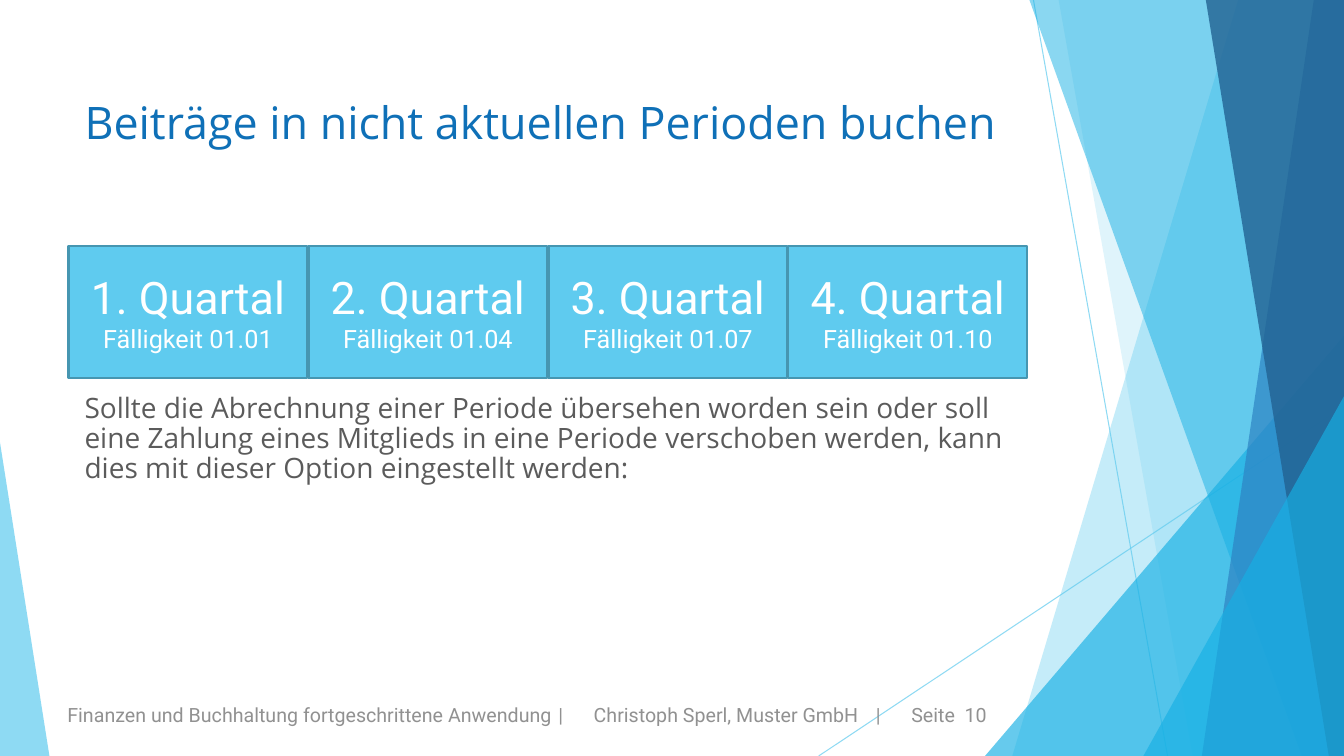
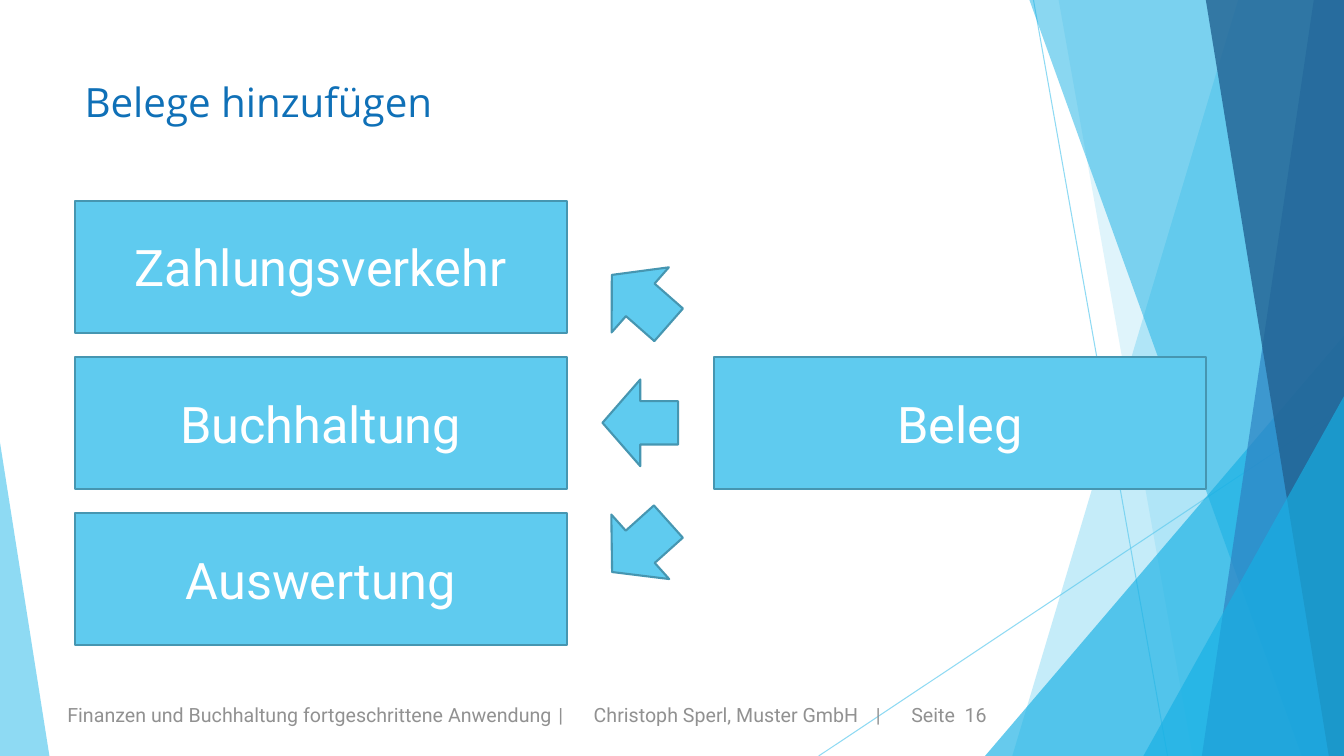
from lxml.etree import SubElement
from pptx import Presentation
from pptx.dml.color import RGBColor
from pptx.enum.shapes import MSO_CONNECTOR, MSO_SHAPE
from pptx.enum.text import MSO_ANCHOR, PP_ALIGN
from pptx.oxml.ns import qn
from pptx.util import Inches, Pt

SKY = RGBColor(0x5F, 0xCB, 0xEF)
CYAN = RGBColor(0x17, 0xB0, 0xE4)
BLUE = RGBColor(0x2E, 0x83, 0xC3)
NAVY = RGBColor(0x22, 0x62, 0x92)
EDGE = RGBColor(0x46, 0x96, 0xB1)
TITLE = RGBColor(0x0F, 0x70, 0xB7)
BODY = RGBColor(0x5B, 0x5B, 0x5B)
FOOTER = RGBColor(0x91, 0x91, 0x91)
WHITE = RGBColor(0xFF, 0xFF, 0xFF)
HEAD_FONT = "Open Sans"
LABEL_FONT = "Roboto"
WIDTH, HEIGHT = 13.33, 7.5
MARGIN = 0.74
BOX_HEIGHT = 1.31
FOOTER_TABS = (4.87, 5.22, 8.02, 8.37, 8.9)


class Deck:
    """Hold the shared style and the current slide."""

    def __init__(self):
        self.presentation = Presentation()
        self.presentation.slide_width = Inches(WIDTH)
        self.presentation.slide_height = Inches(HEIGHT)
        self.slide = None

    def new_slide(self, title, top, size, number):
        self.slide = self.presentation.slides.add_slide(self.presentation.slide_layouts[6])
        self.facets()
        self.footer(number)
        self.text(title, MARGIN, top, 9.4, 0.7, size, HEAD_FONT, TITLE)

    def fade(self, fill, opacity):
        for color in fill.iter(qn("a:srgbClr")):
            SubElement(color, qn("a:alpha"), val=str(opacity * 1000))

    def paint(self, shape, color, opacity=100, edge=None):
        shape.shadow.inherit = False
        shape.fill.solid()
        shape.fill.fore_color.rgb = color
        if opacity < 100:
            self.fade(shape.fill._xPr.find(qn("a:solidFill")), opacity)
        if edge is None:
            shape.line.fill.background()
        else:
            shape.line.color.rgb = edge
            shape.line.width = Pt(1.5)

    def ray(self, start, end):
        line = self.slide.shapes.add_connector(
            MSO_CONNECTOR.STRAIGHT, *map(Inches, start + end))
        line.line.color.rgb = SKY
        line.line.width = Pt(0.75)
        properties = line._element.spPr
        self.fade(properties, 70)
        SubElement(properties, qn("a:effectLst"))

    def shard(self, top_x, bottom_x, color, opacity):
        builder = self.slide.shapes.build_freeform(Inches(top_x), 0)
        corners = ((WIDTH, 0), (WIDTH, HEIGHT), (bottom_x, HEIGHT))
        builder.add_line_segments([(Inches(x), Inches(y)) for x, y in corners])
        self.paint(builder.convert_to_shape(), color, opacity)

    def wedge(self, left, top, width, apex, color, opacity):
        triangle = self.slide.shapes.add_shape(
            MSO_SHAPE.ISOSCELES_TRIANGLE,
            Inches(left), Inches(top), Inches(width), Inches(HEIGHT - top))
        triangle.adjustments[0] = apex
        self.paint(triangle, color, opacity)

    def facets(self):
        self.ray((10.25, 0), (11.58, HEIGHT))
        self.ray((WIDTH, 4.03), (8.12, HEIGHT))
        self.shard(12.28, 10.04, SKY, 36)
        self.shard(10.5, 11.83, SKY, 20)
        self.wedge(9.77, 3.33, 3.56, 1, CYAN, 66)
        self.shard(10.21, 12.91, CYAN, 50)
        self.shard(13.03, 11.92, BLUE, 70)
        self.shard(11.96, 13.18, NAVY, 80)
        self.wedge(11.34, 3.93, 1.99, 1, CYAN, 66)
        self.wedge(0, 4.39, 0.49, 0, SKY, 70)

    def text(self, content, left, top, width, height, size, font, color, tabs=()):
        box = self.slide.shapes.add_textbox(
            Inches(left), Inches(top), Inches(width), Inches(height))
        box.text_frame.word_wrap = True
        paragraph = box.text_frame.paragraphs[0]
        paragraph.text = content
        if tabs:
            stops = SubElement(paragraph._p.get_or_add_pPr(), qn("a:tabLst"))
            for position in tabs:
                SubElement(stops, qn("a:tab"), pos=str(Inches(position)), algn="l")
        self.style(paragraph.runs[0], size, font, color)
        return paragraph

    def style(self, run, size, font, color):
        run.font.size = Pt(size)
        run.font.name = font
        run.font.color.rgb = color

    def footer(self, number):
        self.text("Finanzen und Buchhaltung fortgeschrittene Anwendung\t|\t"
                  f"Christoph Sperl, Muster GmbH\t|\tSeite\t{number}",
                  0.57, 6.92, 10.36, 0.34, 14, LABEL_FONT, FOOTER, FOOTER_TABS)

    def body(self, content, top):
        paragraph = self.text(content, MARGIN, top, 9.76, 2.36, 20, HEAD_FONT, BODY)
        paragraph.line_spacing = 0.9

    def box(self, content, left, top, width, sizes):
        shape = self.slide.shapes.add_shape(
            MSO_SHAPE.RECTANGLE,
            Inches(left), Inches(top), Inches(width), Inches(BOX_HEIGHT))
        self.paint(shape, SKY, edge=EDGE)
        shape.text_frame.word_wrap = True
        shape.text_frame.vertical_anchor = MSO_ANCHOR.MIDDLE
        paragraph = shape.text_frame.paragraphs[0]
        paragraph.text = content
        paragraph.alignment = PP_ALIGN.CENTER
        for run, size in zip(paragraph.runs, sizes):
            self.style(run, size, LABEL_FONT, WHITE)

    def arrow(self, top, angle):
        shape = self.slide.shapes.add_shape(
            MSO_SHAPE.DOWN_ARROW, Inches(5.92), Inches(top), Inches(0.86), Inches(0.75))
        shape.rotation = angle
        self.paint(shape, SKY, edge=EDGE)


def main():
    deck = Deck()

    deck.new_slide("Beiträge in nicht aktuellen Perioden buchen", 0.89, 32, 10)
    for index, month in enumerate(("01", "04", "07", "10")):
        deck.box(f"{index + 1}. Quartal\vFälligkeit 01.{month}",
                 0.68 + index * 2.38, 2.44, 2.37, (32, 18))
    deck.body("Sollte die Abrechnung einer Periode übersehen worden sein oder soll "
              "eine Zahlung eines Mitglieds in eine Periode verschoben werden, kann "
              "dies mit dieser Option eingestellt werden:", 3.86)

    deck.new_slide("Belege hinzufügen", 0.72, 28.8, 16)
    for index, target in enumerate(("Zahlungsverkehr", "Buchhaltung", "Auswertung")):
        deck.box(target, MARGIN, 1.99 + index * 1.55, 4.88, (36,))
    deck.box("Beleg", 7.08, 3.54, 4.88, (36,))
    for top, angle in ((2.6, 131.3), (3.82, 90), (5.05, 48.1)):
        deck.arrow(top, angle)

    deck.presentation.save("out.pptx")


if __name__ == "__main__":
    main()
